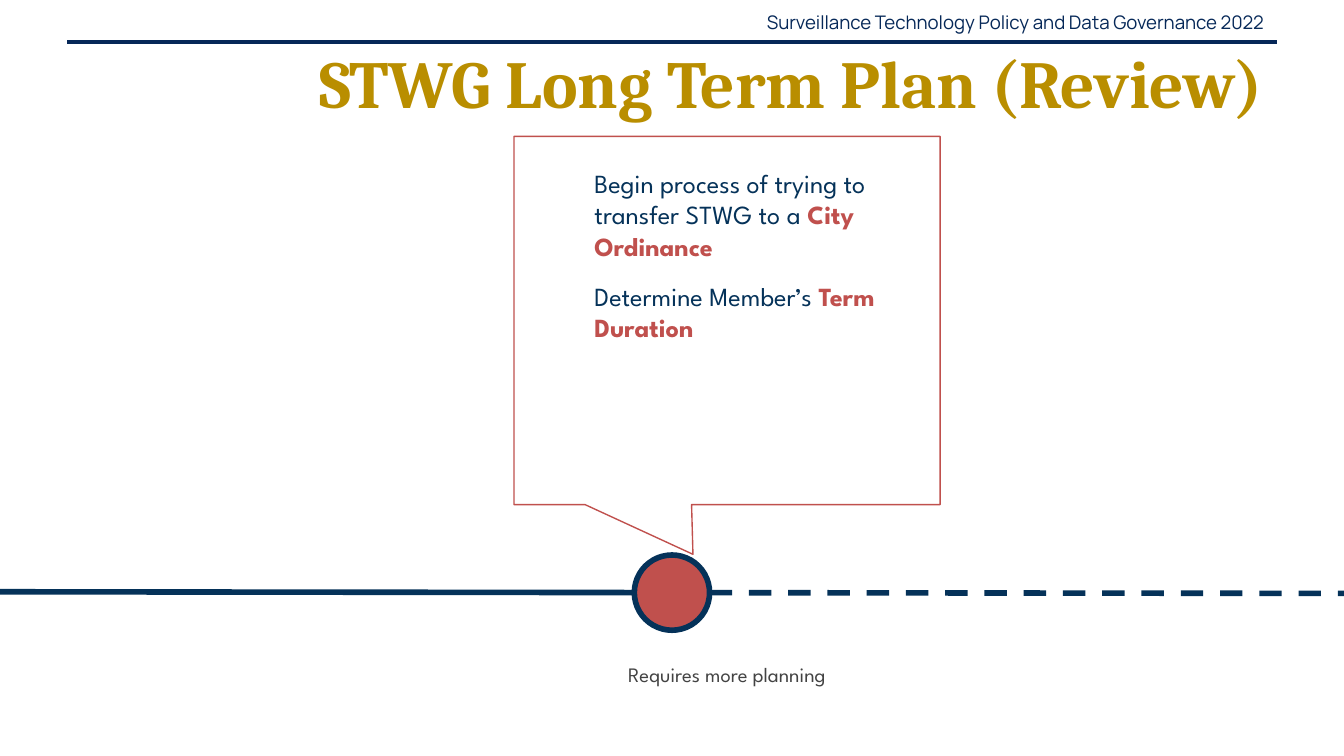
from dataclasses import dataclass

from lxml import etree
from pptx import Presentation
from pptx import util as u
from pptx.dml.color import RGBColor
from pptx.enum import dml, shapes, text
from pptx.oxml import ns

PX = 4572  # EMU per px: 200 px to the inch


@dataclass(frozen=True)
class Theme:
    rule: str = "062858"
    navy: str = "053259"
    red: str = "C0504D"
    gold: str = "B98E00"
    gray: str = "434343"
    header_font: str = "Manrope"
    title_font: str = "Cambria"
    body_font: str = "League Spartan"
    header_size: int = 10
    title_size: int = 36
    body_size: int = 14
    note_size: int = 11
    thin: float = 0.75
    medium: float = 2.25
    thick: float = 3


T = Theme()


def px(*values):
    return [u.Emu(v * PX) for v in values]


def set_line(line, color, width):
    line.color.rgb = RGBColor.from_string(color)
    line.width = u.Pt(width)


def add_line(s, start, end, color, width, dashed=False):
    c = s.shapes.add_connector(shapes.MSO_CONNECTOR.STRAIGHT, *px(*start, *end))
    set_line(c.line, color, width)
    if dashed:
        c.line.dash_style = dml.MSO_LINE.DASH
    etree.SubElement(c.element.spPr, ns.qn("a:effectLst"))


def add_shape(s, kind, box, color, width, fill=None):
    sp = s.shapes.add_shape(kind, *px(*box))
    sp.shadow.inherit = False
    if fill:
        sp.fill.solid()
        sp.fill.fore_color.rgb = RGBColor.from_string(fill)
    else:
        sp.fill.background()
    set_line(sp.line, color, width)
    return sp


def add_text(s, box, paragraphs, font, size, align, anchor="TOP", inset=20,
             indent=0, gap=0):
    """Each paragraph is a list of (wording, colour, bold) runs."""
    tf = s.shapes.add_textbox(*px(*box)).text_frame
    tf.word_wrap = True
    tf.vertical_anchor = getattr(text.MSO_ANCHOR, anchor)
    tf.margin_left, tf.margin_right = px(20, 20)
    tf.margin_top, tf.margin_bottom = px(inset, inset)
    for i, runs in enumerate(paragraphs):
        p = tf.add_paragraph() if i else tf.paragraphs[0]
        p.alignment = getattr(text.PP_ALIGN, align)
        if i and gap:
            p.space_before = u.Pt(gap)
        if indent:
            pPr = p._p.get_or_add_pPr()
            pPr.set("marL", str(indent * PX))
            pPr.set("indent", "0")
        for wording, color, bold in runs:
            r = p.add_run()
            r.text = wording
            r.font.name, r.font.size, r.font.bold = font, u.Pt(size), bold
            r.font.color.rgb = RGBColor.from_string(color)


def header(s, x, y, w, h):
    add_line(s, (x, y + h), (x + w, y + h), T.rule, T.medium)
    add_text(s, (x + w - 858, y + 1, 858, h),
             [[("Surveillance Technology Policy and Data Governance 2022",
                T.rule, False)]],
             T.header_font, T.header_size, "RIGHT", "MIDDLE", inset=10)


def title(s, x, y, w, h):
    add_text(s, (x, y, w, h),
             [[("STWG Long Term Plan (Review)", T.gold, True)]],
             T.title_font, T.title_size, "RIGHT", "MIDDLE", inset=10)


def timeline(s, x, y, w, milestone, size):
    """Solid up to the milestone's right edge, dashed after it."""
    now = milestone + size
    add_line(s, (now, y + 2), (x + w, y + 4), T.navy, T.thick, dashed=True)
    add_line(s, (x, y), (now, y + 2), T.navy, T.thick)
    add_shape(s, shapes.MSO_SHAPE.OVAL, (milestone, y + 2 - size // 2, size, size),
              T.navy, T.thick, T.red)


def callout(s, x, y, w, h):
    sp = add_shape(s, shapes.MSO_SHAPE.RECTANGULAR_CALLOUT, (x, y, w, h),
                   T.red, T.thin)
    sp.adjustments[0], sp.adjustments[1] = -0.08, 0.635
    add_text(s, (x, y + 26, w, 380), [
        [("Begin process of trying to transfer STWG to a ", T.navy, False),
         ("City Ordinance", T.red, True)],
        [("Determine Member’s ", T.navy, False),
         ("Term Duration", T.red, True)],
    ], T.body_font, T.body_size, "LEFT", indent=100, gap=10)


def note(s, x, y, w, h):
    add_text(s, (x, y, w, h), [[("Requires more planning", T.gray, False)]],
             T.body_font, T.note_size, "CENTER")


def main():
    prs = Presentation()
    prs.slide_width, prs.slide_height = px(2000, 1125)
    s = prs.slides.add_slide(prs.slide_layouts[6])
    header(s, 100, 2, 1800, 60)
    callout(s, 765, 203, 634, 548)
    timeline(s, -490, 880, 3206, milestone=944, size=112)
    note(s, 825, 966, 514, 78)
    title(s, 94, 58, 1806, 128)
    prs.save("out.pptx")


if __name__ == "__main__":
    main()
